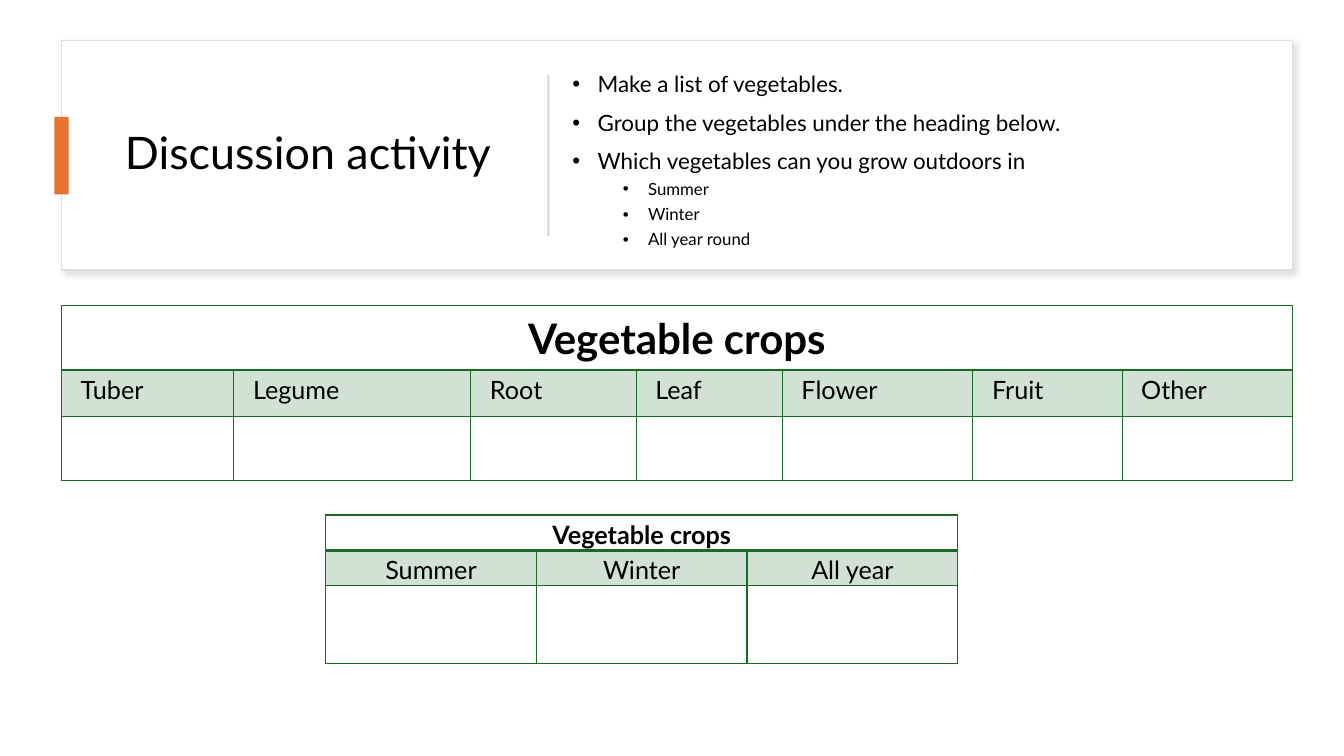
from lxml import etree
from pptx import Presentation
from pptx.dml.color import RGBColor
from pptx.enum.shapes import MSO_SHAPE
from pptx.enum.text import MSO_ANCHOR, PP_ALIGN
from pptx.oxml import parse_xml
from pptx.oxml.ns import nsdecls, qn
from pptx.util import Inches, Pt

INK = {"text": "000000", "card": "FFFFFF", "edge": "DEDEDE", "shade": "C5C5C5",
       "mark": "E97132", "rule": "D5D5D5", "crop": "196B24"}
FONT = "Lato"

deck = Presentation()
deck.slide_width, deck.slide_height = Inches(13.33), Inches(7.5)
unit = deck.slide_height // 750
slide = deck.slides.add_slide(deck.slide_layouts[6])
shapes = slide.shapes


def grid(*cells):
    return [cell * unit for cell in cells]


def write(para, text, size, bold=False):
    run = para.add_run()
    run.text = text
    run.font.name = FONT
    run.font.size = Pt(size)
    run.font.bold = bold
    run.font.color.rgb = RGBColor.from_string(INK["text"])


panels = []
for place, tint in [((61, 40, 1221, 228), "card"),
                    ((54, 116, 14, 77), "mark"),
                    ((543, 74, 2, 160), "rule")]:
    panel = shapes.add_shape(MSO_SHAPE.RECTANGLE, *grid(*place))
    panel.shadow.inherit = False
    panel.fill.solid()
    panel.fill.fore_color.rgb = RGBColor.from_string(INK[tint])
    panel.line.fill.background()
    panels.append(panel)

card = panels[0]
card.line.color.rgb = RGBColor.from_string(INK["edge"])
card.line.width = Pt(1)
glow = card._element.spPr.find(qn("a:effectLst"))
glow.append(parse_xml(
    f'<a:outerShdw {nsdecls("a")} blurRad="{Pt(4)}" dist="{Pt(3)}" dir="2700000">'
    f'<a:srgbClr val="{INK["shade"]}"><a:alpha val="50000"/></a:srgbClr></a:outerShdw>'))

title = shapes.add_textbox(*grid(114, 64, 389, 180)).text_frame
title.word_wrap = True
title.vertical_anchor = MSO_ANCHOR.MIDDLE
head = title.paragraphs[0]
head.line_spacing = 0.9
write(head, "Discussion activity", 32)

body = shapes.add_textbox(*grid(558, 64, 684, 204)).text_frame
body.word_wrap = True
body.margin_top = Inches(0.09)
tasks = [("Make a list of vegetables.", 0),
         ("Group the vegetables under the heading below.", 0),
         ("Which vegetables can you grow outdoors in", 0),
         ("Summer", 1), ("Winter", 1), ("All year round", 1)]
for rank, (text, level) in enumerate(tasks):
    para = body.add_paragraph() if rank else body.paragraphs[0]
    para.level = level
    para.line_spacing = 0.9
    para.space_before = Pt((10, 5)[level] if rank else 0)
    props = para._p.get_or_add_pPr()
    props.set("marL", str(Inches((0.25, 0.75)[level])))
    props.set("indent", str(-Inches(0.25)))
    etree.SubElement(props, qn("a:buFont")).set("typeface", "Arial")
    etree.SubElement(props, qn("a:buChar")).set("char", "•")
    write(para, text, (16, 12)[level])

crops = [
    ((61, 303), (171, 235, 164, 145, 189, 148, 169), (64, 46, 64), 30, 0.19, PP_ALIGN.LEFT,
     ["Tuber", "Legume", "Root", "Leaf", "Flower", "Fruit", "Other"]),
    ((323, 511), (209, 209, 209), (35, 35, 77), 18, 0.07, PP_ALIGN.CENTER,
     ["Summer", "Winter", "All year"]),
]
for spot, cols, rows, size, inset, align, names in crops:
    place = grid(*spot, sum(cols), sum(rows))
    table = shapes.add_table(len(rows), len(cols), *place).table
    table.first_row = table.horz_banding = False
    for col, wide in zip(table.columns, cols):
        col.width = wide * unit
    for row, tall in zip(table.rows, rows):
        row.height = tall * unit
    table.cell(0, 0).merge(table.cell(0, len(cols) - 1))
    lines = [["Vegetable crops"], names, []]
    for r, texts in enumerate(lines):
        for c in range(len(cols)):
            cell = table.cell(r, c)
            cell.fill.background()
            if r == 1:
                cell.fill.solid()
                cell.fill.fore_color.rgb = RGBColor.from_string(INK["crop"])
                tone = cell._tc.tcPr.find(".//" + qn("a:srgbClr"))
                etree.SubElement(tone, qn("a:alpha")).set("val", "20000")
            if c < len(texts):
                cell.margin_left = cell.margin_right = Inches(inset)
                cell.margin_top = cell.margin_bottom = 0
                para = cell.text_frame.paragraphs[0]
                para.alignment = align if r else PP_ALIGN.CENTER
                para.line_spacing = 1.15
                para.space_before = para.space_after = Pt(6)
                write(para, texts[c], 18 if r else size, r == 0)
            for n, side in enumerate("LRTB"):
                thick = (r, side) in [(0, "B"), (1, "T")]
                cell._tc.tcPr.insert(n, parse_xml(
                    f'<a:ln{side} {nsdecls("a")} w="{Pt(2 if thick else 1)}"><a:solidFill>'
                    f'<a:srgbClr val="{INK["crop"]}"/></a:solidFill></a:ln{side}>'))

deck.save("out.pptx")
